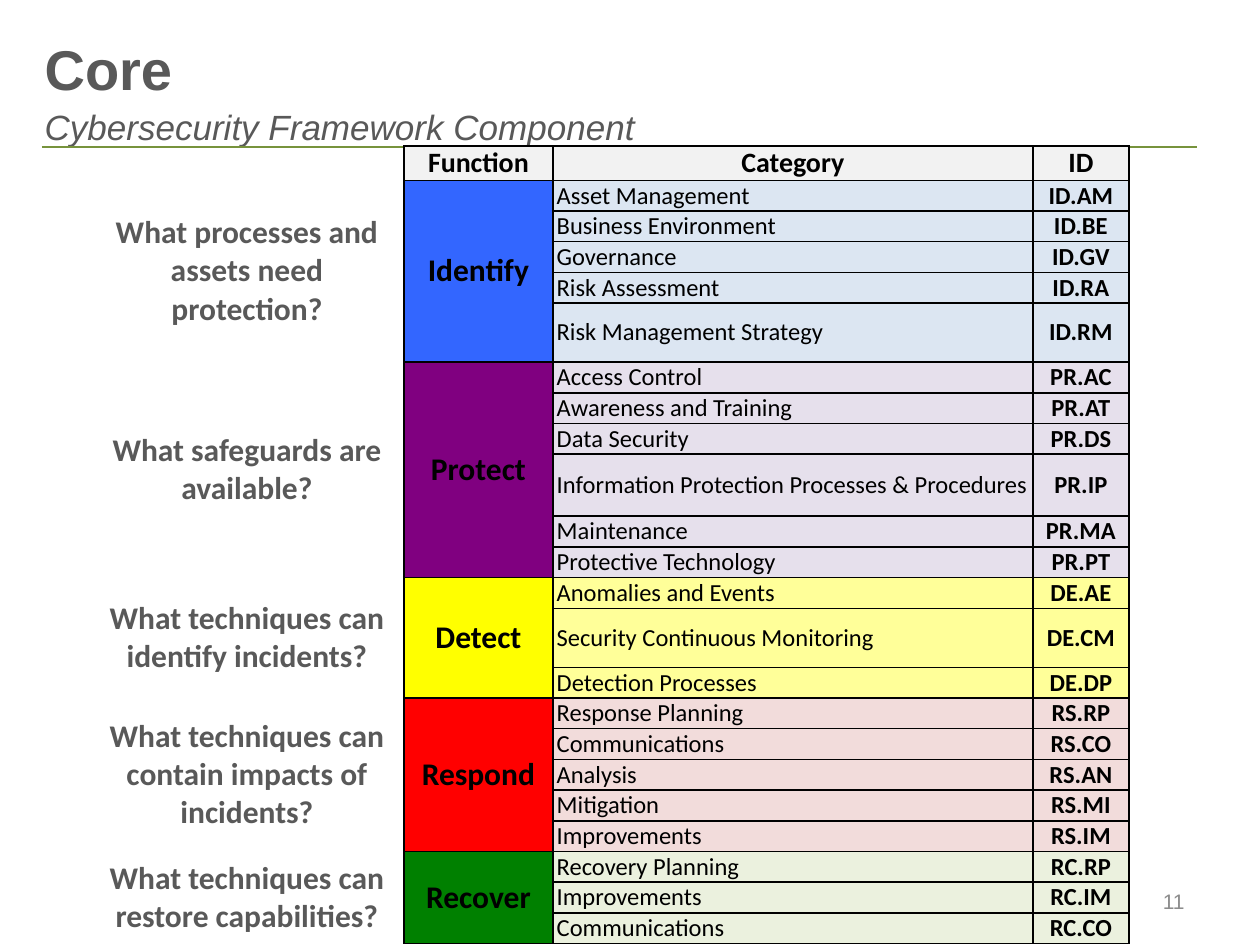
from lxml.etree import SubElement
from pptx import Presentation
from pptx.dml.color import RGBColor
from pptx.enum.shapes import MSO_CONNECTOR
from pptx.enum.text import MSO_ANCHOR, MSO_AUTO_SIZE, PP_ALIGN
from pptx.oxml.ns import qn
from pptx.util import Emu, Inches, Pt

COLORS = {
    "text": "595959", "number": "8C8C8C", "rule": "77933C",
    "black": "000000", "header": "F2F2F2",
}

# Question, function, function fill, category fill, ID prefix, categories
FUNCTIONS = [
    ("What processes and assets need protection?", "Identify", "3366FF", "DCE6F2", "ID", [
        ("Asset Management", "AM"), ("Business Environment", "BE"), ("Governance", "GV"),
        ("Risk Assessment", "RA"), ("Risk Management Strategy", "RM")]),
    ("What safeguards are available?", "Protect", "800080", "E6E0EC", "PR", [
        ("Access Control", "AC"), ("Awareness and Training", "AT"), ("Data Security", "DS"),
        ("Information Protection Processes & Procedures", "IP"),
        ("Maintenance", "MA"), ("Protective Technology", "PT")]),
    ("What techniques can identify incidents?", "Detect", "FFFF00", "FFFF99", "DE", [
        ("Anomalies and Events", "AE"), ("Security Continuous Monitoring", "CM"),
        ("Detection Processes", "DP")]),
    ("What techniques can contain impacts of incidents?", "Respond", "FF0000", "F2DCDB", "RS", [
        ("Response Planning", "RP"), ("Communications", "CO"), ("Analysis", "AN"),
        ("Mitigation", "MI"), ("Improvements", "IM")]),
    ("What techniques can restore capabilities?", "Recover", "008000", "EBF1DE", "RC", [
        ("Recovery Planning", "RP"), ("Improvements", "IM"), ("Communications", "CO")]),
]
COLUMN_WIDTHS = [314, 149, 480, 96]
TABLE_HEIGHT = 798
SPECIAL_ROWS = {0: 34, 5: 59, 9: 62, 13: 59}


class SlideBuilder:
    def __init__(self, slide):
        self.slide = slide

    def px(self, length):
        return Emu(round(length * 914400 / 126))

    def color(self, name):
        return RGBColor.from_string(COLORS.get(name, name))

    def style(self, font, size, color="text", name="Calibri", bold=False, italic=False):
        font.size, font.name, font.bold, font.italic = Pt(size), name, bold, italic
        font.color.rgb = self.color(color)

    def place(self, shape, *box):
        shape.left, shape.top, shape.width, shape.height = map(self.px, box)

    def title(self, heading, subheading, *box):
        title = self.slide.shapes.title
        self.place(title, *box)
        frame = title.text_frame
        frame.auto_size = MSO_AUTO_SIZE.NONE
        frame.vertical_anchor = MSO_ANCHOR.BOTTOM
        paragraph = frame.paragraphs[0]
        paragraph.text = f"{heading}\v{subheading}"
        paragraph.alignment = PP_ALIGN.LEFT
        paragraph.line_spacing = Pt(26)
        heading_run, subheading_run = paragraph.runs
        self.style(heading_run.font, 32, name="Arial", bold=True)
        self.style(subheading_run.font, 20, name="Arial", italic=True)

    def rule(self, x1, y1, x2, y2):
        rule = self.slide.shapes.add_connector(
            MSO_CONNECTOR.STRAIGHT, *map(self.px, (x1, y1, x2, y2)))
        rule.line.color.rgb = self.color("rule")
        rule.line.width = Pt(0.75)
        SubElement(rule.element.spPr, qn("a:effectLst"))

    def label(self, text, *box):
        label = self.slide.shapes.add_textbox(*map(self.px, box))
        frame = label.text_frame
        frame.word_wrap = True
        frame.vertical_anchor = MSO_ANCHOR.MIDDLE
        frame.text = text
        frame.paragraphs[0].alignment = PP_ALIGN.RIGHT
        self.style(frame.paragraphs[0].runs[0].font, 12, "number", "Arial")

    def table(self, left, top, widths, heights):
        frame = self.slide.shapes.add_table(
            len(heights), len(widths),
            *map(self.px, (left, top, sum(widths), sum(heights))))
        table = frame.table
        table.first_row = table.horz_banding = False
        for column, width in zip(table.columns, widths):
            column.width = self.px(width)
        for row, height in zip(table.rows, heights):
            row.height = self.px(height)
        return table

    def blank_cell(self, cell, visible_borders):
        cell.margin_left = cell.margin_right = Inches(0.03)
        cell.margin_top = cell.margin_bottom = 0
        cell.fill.background()
        # A small end mark keeps an empty cell from stretching its row
        SubElement(cell.text_frame.paragraphs[0]._p, qn("a:endParaRPr"), sz="1200")
        properties = cell._tc.get_or_add_tcPr()
        for position, side in enumerate("LRTB"):
            line = properties.makeelement(qn(f"a:ln{side}"), {"w": str(Pt(1))})
            properties.insert(position, line)
            if side in visible_borders:
                fill = SubElement(line, qn("a:solidFill"))
                SubElement(fill, qn("a:srgbClr"), val=COLORS["black"])
            else:
                SubElement(line, qn("a:noFill"))

    def cell(self, cell, text, size, fill, color="black", bold=True,
             align=PP_ALIGN.CENTER, after=6):
        cell.vertical_anchor = MSO_ANCHOR.MIDDLE
        if fill:
            cell.fill.solid()
            cell.fill.fore_color.rgb = self.color(fill)
        cell.text_frame.text = text
        paragraph = cell.text_frame.paragraphs[0]
        paragraph.alignment = align
        paragraph.space_after = Pt(after)
        self.style(paragraph.runs[0].font, size, color, bold=bold)


def main():
    presentation = Presentation()
    presentation.slide_width, presentation.slide_height = Inches(10), Inches(7.5)
    builder = SlideBuilder(presentation.slides.add_slide(presentation.slide_layouts[5]))

    # Heading
    builder.rule(42, 147, 1197, 147)
    builder.title("Core", "Cybersecurity Framework Component", 32, 49, 1165, 105)

    # Core table: ordinary rows share the height left by the special ones
    row_count = 1 + sum(len(categories) for *_, categories in FUNCTIONS)
    ordinary = (TABLE_HEIGHT - sum(SPECIAL_ROWS.values())) / (row_count - len(SPECIAL_ROWS))
    heights = [SPECIAL_ROWS.get(row, ordinary) for row in range(row_count)]
    core = builder.table(90, 146, COLUMN_WIDTHS, heights)
    for row in range(row_count):
        for column in range(len(COLUMN_WIDTHS)):
            builder.blank_cell(core.cell(row, column), "LRTB" if column else "R")

    # Header row
    for column, heading in enumerate(("Function", "Category", "ID"), start=1):
        builder.cell(core.cell(0, column), heading, 16, "header")

    # One block of rows per function
    first = 1
    for question, function, strong, pale, prefix, categories in FUNCTIONS:
        last = first + len(categories) - 1
        for column in (0, 1):
            core.cell(first, column).merge(core.cell(last, column))
        builder.cell(core.cell(first, 0), question, 18, None, "text")
        builder.cell(core.cell(first, 1), function, 18, strong)
        for row, (category, code) in enumerate(categories, start=first):
            builder.cell(core.cell(row, 2), category, 14, pale,
                         bold=False, align=PP_ALIGN.LEFT, after=3)
            builder.cell(core.cell(row, 3), f"{prefix}.{code}", 14, pale, after=3)
        first = last + 1

    # Slide number
    builder.label("11", 903, 876, 294, 50)

    presentation.save("out.pptx")


if __name__ == "__main__":
    main()
